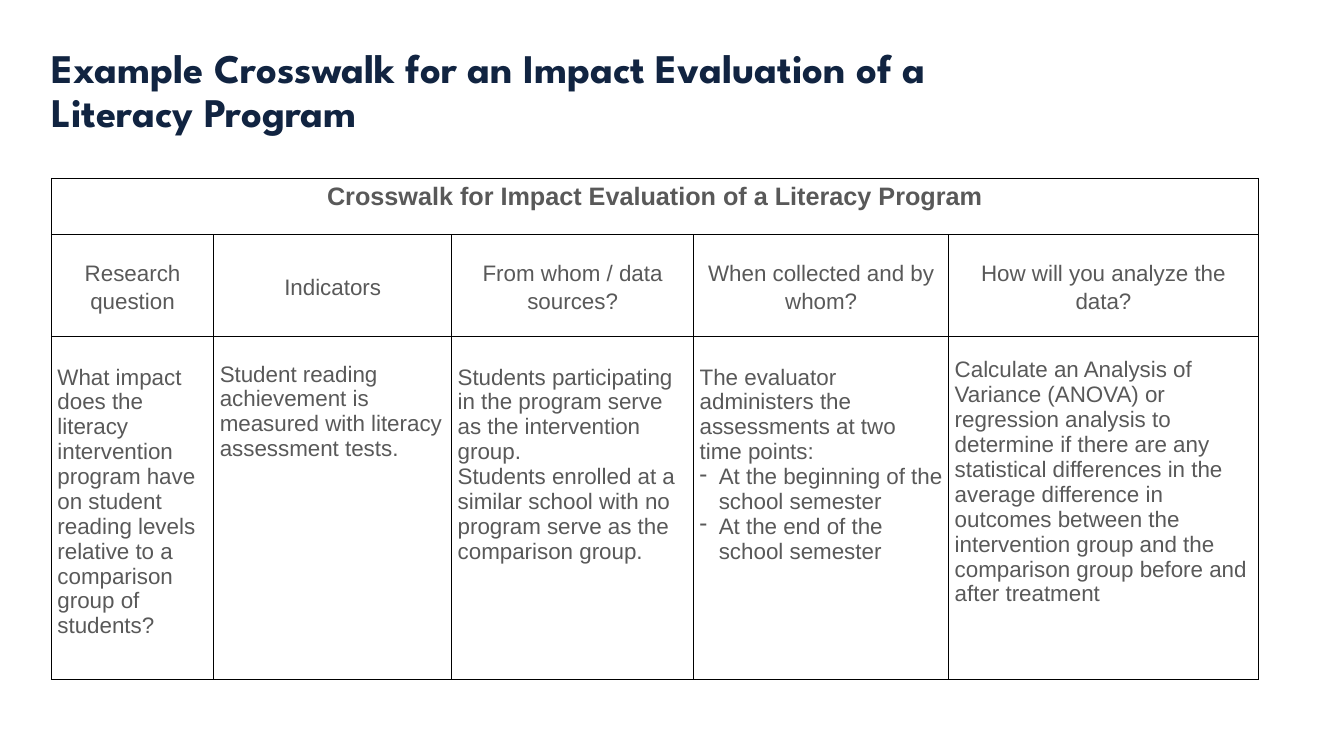
"""Builds a slide with an evaluation crosswalk table."""
from lxml import etree
from pptx import Presentation
from pptx.dml.color import RGBColor
from pptx.enum.text import MSO_ANCHOR, MSO_AUTO_SIZE, PP_ALIGN
from pptx.oxml.ns import qn
from pptx.util import Inches, Pt

LEFT, CENTER = PP_ALIGN.LEFT, PP_ALIGN.CENTER
TOP, MIDDLE, BOTTOM = MSO_ANCHOR.TOP, MSO_ANCHOR.MIDDLE, MSO_ANCHOR.BOTTOM

TITLE = "Example Crosswalk for an Impact Evaluation of a Literacy Program"
TABLE_HEADING = "Crosswalk for Impact Evaluation of a Literacy Program"
COLUMNS = [
    {"width": 1.61, "top": 0.28, "header": "Research question",
     "body": ["What impact does the literacy intervention program have on student "
              "reading levels relative to a comparison group of students?"]},
    {"width": 2.36, "top": 0.25, "header": "Indicators",
     "body": ["Student reading achievement is measured with literacy assessment tests."]},
    {"width": 2.4, "top": 0.28, "header": "From whom / data sources?",
     "body": ["Students participating in the program serve as the intervention group.",
              "Students enrolled at a similar school with no program serve as the "
              "comparison group."]},
    {"width": 2.53, "top": 0.28, "header": "When collected and by whom?",
     "body": ["The evaluator administers the assessments at two time points:"],
     "bullets": ["At the beginning of the school semester",
                 "At the end of the school semester"]},
    {"width": 3.07, "top": 0.21, "header": "How will you analyze the data?",
     "body": ["Calculate an Analysis of Variance (ANOVA) or regression analysis to "
              "determine if there are any statistical differences in the average "
              "difference in outcomes between the intervention group and the "
              "comparison group before and after treatment"]},
]
ROW_HEIGHTS = [0.56, 1.01, 3.4]
MARGIN_LEFT, TABLE_TOP = 0.51, 1.77
CELL_INSET, BULLET_INDENT = 0.06, 0.19
COLORS = {"title": "112441", "text": "595959", "border": "000000"}

TITLE_FONT = {"name": "League Spartan", "size": Pt(29), "bold": True}
HEADING_FONT = {"name": "Arial", "size": Pt(18), "bold": True}
CELL_FONT = {"name": "Arial", "size": Pt(16), "bold": False}
HEADER_PARAGRAPH = {"alignment": CENTER, "line_spacing": 1.15}
BODY_PARAGRAPH = {"alignment": LEFT}


def set_attributes(target, values):
    for name, value in values.items():
        setattr(target, name, value)


def style_paragraph(paragraph, font, color, layout):
    set_attributes(paragraph, layout)
    set_attributes(paragraph.font, font)
    paragraph.font.color.rgb = RGBColor.from_string(COLORS[color])


def add_bullet(paragraph):
    properties = paragraph._p.get_or_add_pPr()
    properties.set("marL", str(Inches(BULLET_INDENT)))
    properties.set("indent", str(-Inches(BULLET_INDENT)))
    etree.SubElement(properties, qn("a:buChar"), char="-")


def add_borders(cell):
    properties = cell._tc.get_or_add_tcPr()
    for position, side in enumerate(("lnL", "lnR", "lnT", "lnB")):
        line = etree.Element(qn(f"a:{side}"), w=str(Pt(1)))
        fill = etree.SubElement(line, qn("a:solidFill"))
        etree.SubElement(fill, qn("a:srgbClr"), val=COLORS["border"])
        properties.insert(position, line)


def write_cell(cell, texts, font, layout, anchor=TOP, top=0, bullets=()):
    set_attributes(cell, {"margin_top": Inches(top), "vertical_anchor": anchor})
    frame = cell.text_frame
    for index, text in enumerate([*texts, *bullets]):
        paragraph = frame.add_paragraph() if index else frame.paragraphs[0]
        paragraph.text = text
        if index >= len(texts):
            add_bullet(paragraph)
        style_paragraph(paragraph, font, "text", layout)


def add_title(slide):
    title = slide.shapes.title
    set_attributes(title, {"left": Inches(MARGIN_LEFT), "top": Inches(0.25),
                           "width": Inches(10.2), "height": Inches(1.1)})
    frame = title.text_frame
    frame.text = TITLE
    set_attributes(frame, {"margin_left": 0, "margin_right": 0, "margin_top": 0,
                           "margin_bottom": 0, "vertical_anchor": BOTTOM,
                           "word_wrap": True, "auto_size": MSO_AUTO_SIZE.NONE})
    style_paragraph(frame.paragraphs[0], TITLE_FONT, "title",
                    {"alignment": LEFT, "line_spacing": 0.9})


def add_crosswalk(slide):
    width = sum(column["width"] for column in COLUMNS)
    table = slide.shapes.add_table(
        len(ROW_HEIGHTS), len(COLUMNS), Inches(MARGIN_LEFT), Inches(TABLE_TOP),
        Inches(width), Inches(sum(ROW_HEIGHTS))).table
    set_attributes(table, {"first_row": False, "horz_banding": False})
    for row, height in zip(table.rows, ROW_HEIGHTS):
        row.height = Inches(height)
    for cell in table.iter_cells():
        set_attributes(cell, {"margin_left": Inches(CELL_INSET),
                              "margin_right": Inches(CELL_INSET),
                              "margin_top": 0, "margin_bottom": 0})
        cell.fill.background()
        add_borders(cell)
    table.cell(0, 0).merge(table.cell(0, len(COLUMNS) - 1))
    write_cell(table.cell(0, 0), [TABLE_HEADING], HEADING_FONT, HEADER_PARAGRAPH)
    for index, column in enumerate(COLUMNS):
        table.columns[index].width = Inches(column["width"])
        write_cell(table.cell(1, index), [column["header"]], CELL_FONT,
                   HEADER_PARAGRAPH, MIDDLE)
        write_cell(table.cell(2, index), column["body"], CELL_FONT, BODY_PARAGRAPH,
                   top=column["top"], bullets=column.get("bullets", ()))


def main():
    presentation = Presentation()
    set_attributes(presentation, {"slide_width": Inches(13.33),
                                  "slide_height": Inches(7.5)})
    slide = presentation.slides.add_slide(presentation.slide_layouts[5])
    add_title(slide)
    add_crosswalk(slide)
    presentation.save("out.pptx")


if __name__ == "__main__":
    main()
